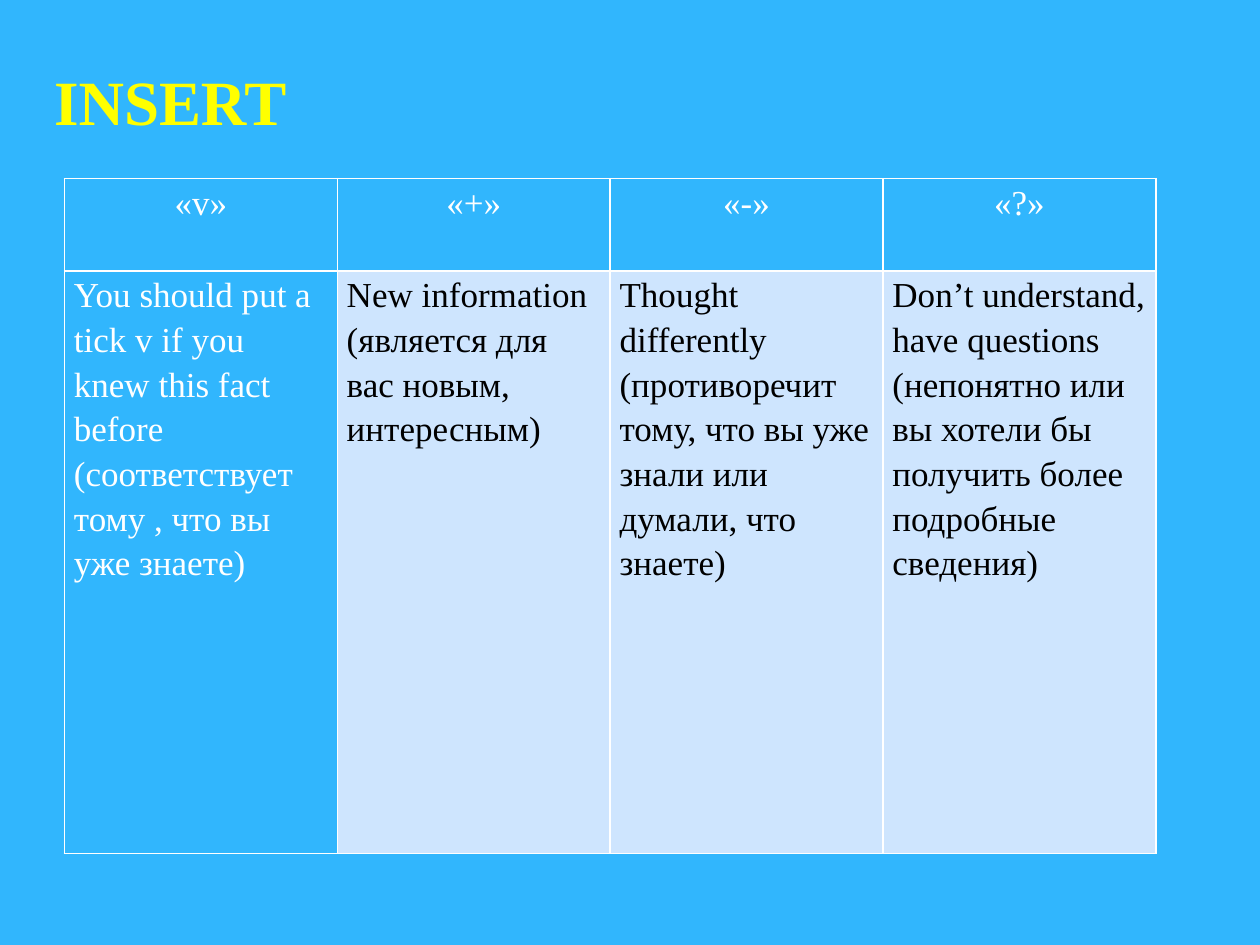
from lxml import etree
from pptx import Presentation
from pptx.dml.color import RGBColor
from pptx.enum.text import MSO_ANCHOR, PP_ALIGN
from pptx.oxml.ns import qn
from pptx.util import Cm, Pt

TOP = MSO_ANCHOR.TOP
LEFT, CENTER = PP_ALIGN.LEFT, PP_ALIGN.CENTER
BLUE, PALE, WHITE, BLACK, YELLOW = "31B6FD", "CEE5FE", "FFFFFF", "000000", "FFFF00"
MARKS = ["«v»", "«+»", "«-»", "«?»"]
NOTES = [
    "You should put a tick v if you knew this fact before\n"
    "(соответствует тому , что вы уже знаете)",
    "New information\n(является для вас новым, интересным)",
    "Thought differently\n"
    "(противоречит тому, что вы уже знали или думали, что знаете)",
    "Don’t understand, have questions\n"
    "(непонятно или вы хотели бы получить более подробные сведения)",
]


def color(code):
    return RGBColor.from_string(code)


class Deck:
    """Holds the style and the current slide."""

    face = "Times New Roman"

    def __init__(self, wide, high):
        self.show = Presentation()
        self.show.slide_width, self.show.slide_height = Cm(wide), Cm(high)

    def page(self, code):
        self.slide = self.show.slides.add_slide(self.show.slide_layouts[6])
        fill = self.slide.background.fill
        fill.solid()
        fill.fore_color.rgb = color(code)

    def style(self, para, size, code, bold=False):
        font = para.font
        font.name, font.size, font.bold = self.face, Pt(size), bold
        font.color.rgb = color(code)

    def title(self, text, x, y, w, h):
        frame = self.slide.shapes.add_textbox(Cm(x), Cm(y), Cm(w), Cm(h)).text_frame
        frame.word_wrap = True
        frame.vertical_anchor = TOP
        frame.margin_top = frame.margin_bottom = 0
        frame.text = text
        self.style(frame.paragraphs[0], 36, YELLOW, True)

    def border(self, cell):
        props = cell._tc.get_or_add_tcPr()
        for side in ("lnL", "lnR", "lnT", "lnB"):
            line = etree.SubElement(props, qn("a:" + side), w=str(Pt(1)))
            solid = etree.SubElement(line, qn("a:solidFill"))
            etree.SubElement(solid, qn("a:srgbClr"), val=WHITE)

    def cell(self, cell, text, back, ink, align):
        self.border(cell)
        cell.fill.solid()
        cell.fill.fore_color.rgb = color(back)
        cell.margin_left = cell.margin_right = Cm(0.19)
        cell.margin_top = cell.margin_bottom = 0
        cell.text = text
        for para in cell.text_frame.paragraphs:
            para.alignment, para.line_spacing = align, 1.15
            self.style(para, 20, ink)

    def table(self, x, y, width, highs, rows):
        count = len(rows[0])
        grid = self.slide.shapes.add_table(
            len(rows), count, Cm(x), Cm(y), Cm(width * count), Cm(sum(highs))
        ).table
        for col in grid.columns:
            col.width = Cm(width)
        for r, (high, texts) in enumerate(zip(highs, rows)):
            grid.rows[r].height = Cm(high)
            for c, text in enumerate(texts):
                dark = r == 0 or c == 0
                back, ink = (BLUE, WHITE) if dark else (PALE, BLACK)
                self.cell(grid.cell(r, c), text, back, ink, LEFT if r else CENTER)


def main():
    deck = Deck(25.4, 19.05)
    deck.page(BLUE)
    deck.title("INSERT", 0.84, 1.27, 24.13, 2.34)
    deck.table(1.3, 3.6, 5.5, [1.86, 11.75], [MARKS, NOTES])
    deck.show.save("out.pptx")


if __name__ == "__main__":
    main()
